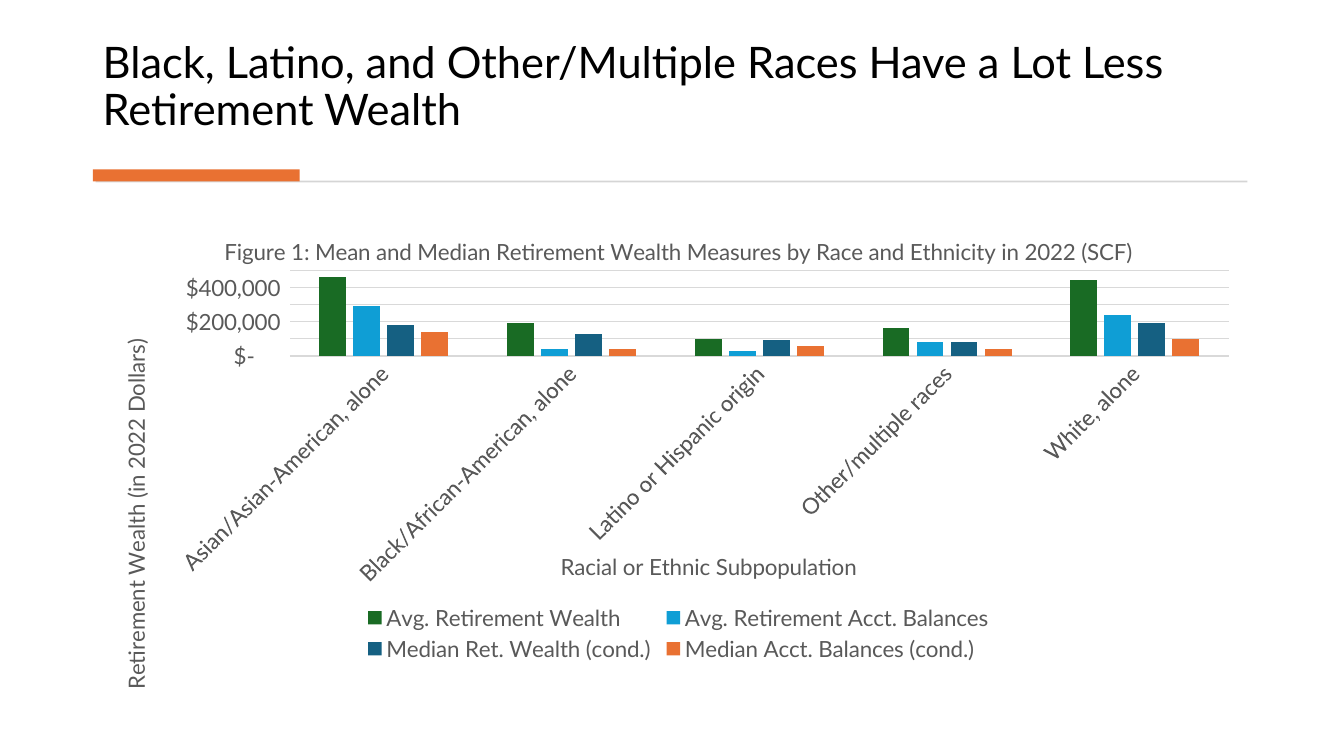
from lxml import etree
from pptx import Presentation
from pptx.chart.data import CategoryChartData
from pptx.dml.color import RGBColor
from pptx.enum.chart import XL_CHART_TYPE, XL_LEGEND_POSITION, XL_TICK_MARK
from pptx.enum.shapes import MSO_SHAPE
from pptx.enum.text import MSO_ANCHOR
from pptx.oxml.ns import qn
from pptx.util import Cm, Pt

COLUMNS = XL_CHART_TYPE.COLUMN_CLUSTERED
BOTTOM = XL_LEGEND_POSITION.BOTTOM
NO_TICK = XL_TICK_MARK.NONE
RECT = MSO_SHAPE.RECTANGLE
LOW = MSO_ANCHOR.BOTTOM

FONT = "Lato"
BLACK = RGBColor(0, 0, 0)
TEXT = RGBColor(0x59, 0x59, 0x59)
GRID = RGBColor(0xD9, 0xD9, 0xD9)
RULE = RGBColor(0xD5, 0xD5, 0xD5)
GREEN = RGBColor(0x19, 0x6B, 0x24)
SKY = RGBColor(0x0F, 0x9E, 0xD5)
NAVY = RGBColor(0x15, 0x60, 0x82)
ORANGE = RGBColor(0xE9, 0x71, 0x32)

HEAD = "Black, Latino, and Other/Multiple Races Have a Lot Less Retirement Wealth"
FIGURE = "Figure 1: Mean and Median Retirement Wealth Measures by Race and Ethnicity in 2022 (SCF)"
GROUPS = ["Asian/Asian-American, alone", "Black/African-American, alone",
          "Latino or Hispanic origin", "Other/multiple races", "White, alone"]
SERIES = [
    ("Avg. Retirement Wealth", GREEN, (460000, 190000, 100000, 160000, 440000)),
    ("Avg. Retirement Acct. Balances", SKY, (290000, 40000, 30000, 80000, 240000)),
    ("Median Ret. Wealth (cond.)", NAVY, (180000, 130000, 90000, 80000, 190000)),
    ("Median Acct. Balances (cond.)", ORANGE, (140000, 40000, 60000, 40000, 100000)),
]
DOLLARS = '_("$"* #,##0_);_("$"* \\(#,##0\\);_("$"* "-"??_);_(@_)'

# Left, top, width, height in centimetres
HEAD_BOX = (2.34, 0.71, 29.18, 2.82)
BARS = [((2.41, 4.55, 29.03, 0.05), RULE), ((2.34, 4.27, 5.21, 0.3), ORANGE)]
CHART_BOX = (2.34, 5.36, 29.21, 12.12)

# Chart parts as fractions of the chart: left, top and, if fixed, width, height
PLACES = {
    "c:chart/c:title": (0.11, 0.04),
    ".//c:plotArea": (0.17, 0.12, 0.81, 0.18),
    ".//c:catAx/c:title": (0.4, 0.7),
    ".//c:valAx/c:title": (0.02, 0.26),
    ".//c:legend": (0.23, 0.81, 0.55, 0.14),
}


def style(font, size=16, color=TEXT):
    font.name, font.size, font.bold = FONT, Pt(size), False
    font.color.rgb = color


def write(frame, text, size=16, color=TEXT, space=None):
    para = frame.paragraphs[0]
    run = para.add_run()
    run.text = text
    style(run.font, size, color)
    if space:
        para.line_spacing = space


def place(part, spots):
    """Give a chart part a fixed layout."""
    for old in part.findall(qn("c:layout")):
        part.remove(old)
    layout = etree.Element(qn("c:layout"))
    manual = etree.SubElement(layout, qn("c:manualLayout"))
    pairs = [("xMode", "edge"), ("yMode", "edge"), *zip("xywh", spots)]
    if part.tag == qn("c:plotArea"):
        pairs.insert(0, ("layoutTarget", "inner"))
    for name, val in pairs:
        etree.SubElement(manual, qn("c:" + name)).set("val", str(val))
    first = part.tag == qn("c:plotArea")
    part.insert(0 if first else 1, layout)


def turn(body, angle):
    body.set("rot", str(angle * 60000))
    body.set("vert", "horz")


def add_head(slide):
    frame = slide.shapes.add_textbox(*map(Cm, HEAD_BOX)).text_frame
    frame.word_wrap = True
    frame.vertical_anchor = LOW
    write(frame, HEAD, size=31, color=BLACK, space=0.9)
    for box, color in BARS:
        bar = slide.shapes.add_shape(RECT, *map(Cm, box))
        bar.shadow.inherit = False
        bar.fill.solid()
        bar.fill.fore_color.rgb = color
        bar.line.fill.background()


def add_wealth(slide):
    data = CategoryChartData()
    data.categories = GROUPS
    for name, _, vals in SERIES:
        data.add_series(name, vals)
    chart = slide.shapes.add_chart(COLUMNS, *map(Cm, CHART_BOX), data).chart
    style(chart.font, 10, BLACK)
    chart.has_title = True
    write(chart.chart_title.text_frame, FIGURE)

    plot = chart.plots[0]
    plot.gap_width, plot.overlap, plot.vary_by_categories = 219, -27, False
    for bars, (_, color, _) in zip(plot.series, SERIES):
        bars.format.fill.solid()
        bars.format.fill.fore_color.rgb = color

    cat, val = chart.category_axis, chart.value_axis
    for axis, title in ((cat, "Racial or Ethnic Subpopulation"),
                        (val, "Retirement Wealth (in 2022 Dollars)")):
        axis.major_tick_mark = axis.minor_tick_mark = NO_TICK
        style(axis.tick_labels.font)
        write(axis.axis_title.text_frame, title)
    val.minimum_scale, val.maximum_scale, val.major_unit = 0, 500000, 100000
    val.tick_labels.number_format = DOLLARS
    val.tick_labels.number_format_is_linked = False
    val.format.line.fill.background()
    for line in (cat.format.line, val.major_gridlines.format.line):
        line.color.rgb, line.width = GRID, Pt(0.75)

    chart.has_legend = True
    chart.legend.position = BOTTOM
    chart.legend.include_in_layout = False
    style(chart.legend.font)

    root = chart.element
    turn(root.xpath(".//c:catAx/c:txPr/a:bodyPr")[0], -45)
    turn(root.xpath(".//c:valAx/c:title//a:bodyPr")[0], -90)
    for query, spots in PLACES.items():
        place(root.xpath(query)[0], spots)


def main():
    deck = Presentation()
    deck.slide_width, deck.slide_height = Cm(33.87), Cm(19.05)
    slide = deck.slides.add_slide(deck.slide_layouts[6])
    add_head(slide)
    add_wealth(slide)
    deck.save("out.pptx")


if __name__ == "__main__":
    main()
